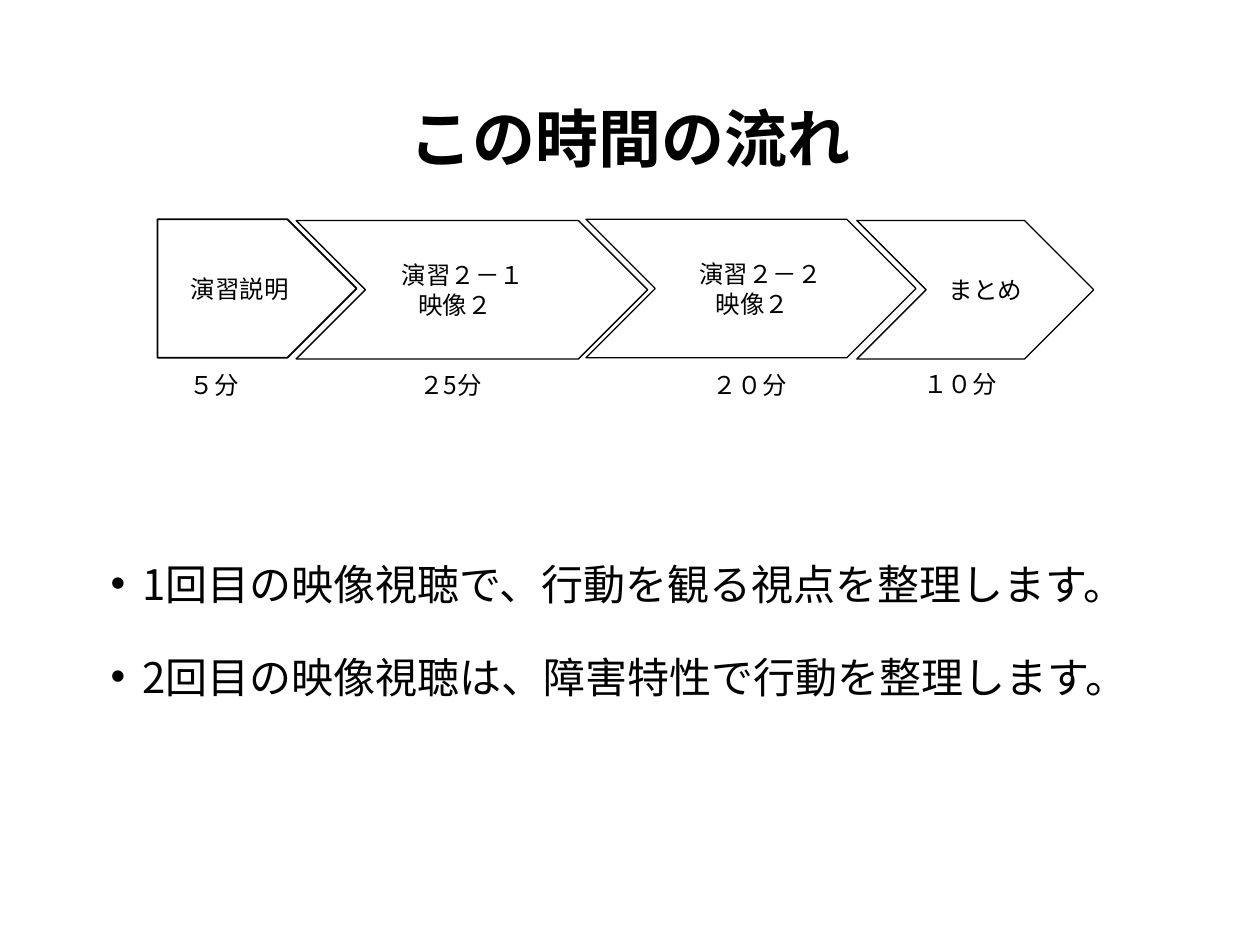
from pptx import Presentation
from pptx.dml.color import RGBColor as Rgb
from pptx.enum.shapes import MSO_SHAPE as Kind
from pptx.enum.text import MSO_ANCHOR as Anchor, MSO_AUTO_SIZE as Fit, PP_ALIGN as Align
from pptx.oxml.ns import qn
from pptx.util import Inches, Pt
from lxml.etree import SubElement

COLS, ROWS = 10, 7.5
INKS = {"text": "000000", "line": "000000", "back": "FFFFFF"}
FONT = "Noto Sans CJK JP"


def apply(item, vals):
    for key, val in vals.items():
        setattr(item, key, val)


class Page:
    """Holds the style and the slide; lengths are columns and rows of the grid."""

    def __init__(self, deck):
        self.unit_x = deck.slide_width / COLS
        self.unit_y = deck.slide_height / ROWS
        self.slide = deck.slides.add_slide(deck.slide_layouts[5])
        fill = self.slide.background.fill
        fill.solid()
        fill.fore_color.rgb = Rgb.from_string(INKS["back"])

    def box(self, x, y, wide, high):
        return [round(n) for n in (x * self.unit_x, y * self.unit_y,
                                   wide * self.unit_x, high * self.unit_y)]

    def words(self, shape, lines, size=14, bold=False, frame=None, para=None):
        text = shape.text_frame
        apply(text, {"word_wrap": True, **(frame or {})})
        text.text = "\n".join(lines)
        for par in text.paragraphs:
            apply(par, para or {})
            for run in par.runs:
                apply(run.font, {"name": FONT, "size": Pt(size), "bold": bold})
                run.font.color.rgb = Rgb.from_string(INKS["text"])
                SubElement(run.font._element, qn("a:ea"), typeface=FONT)
        return text.paragraphs

    def indent(self, par, left, first=0):
        props = par._p.get_or_add_pPr()
        props.set("marL", str(Inches(left)))
        props.set("indent", str(Inches(first)))
        return props

    def title(self, place, line):
        head = self.slide.shapes.title
        apply(head, dict(zip(("left", "top", "width", "height"), self.box(*place))))
        self.words(head, [line], 36, True, {"vertical_anchor": Anchor.MIDDLE},
                   {"alignment": Align.CENTER, "line_spacing": 0.9})

    def label(self, place, lines, **look):
        return self.words(self.slide.shapes.add_textbox(*self.box(*place)), lines, **look)

    def bullets(self, place, lines):
        pars = self.label(place, lines, size=24,
                          para={"line_spacing": 1.5, "space_before": Pt(10)})
        for par in pars:
            props = self.indent(par, 0.25, -0.25)
            SubElement(props, qn("a:buFont"), typeface="Arial")
            SubElement(props, qn("a:buChar"), char="•")

    def step(self, kind, place, lines, weight, left, right):
        """Draws one stage; two lines are set left, the second further in."""
        shape = self.slide.shapes.add_shape(kind, *self.box(*place))
        shape.shadow.inherit = False
        shape.fill.background()
        shape.line.width = Pt(weight)
        shape.line.color.rgb = Rgb.from_string(INKS["line"])
        pair = len(lines) > 1
        pars = self.words(shape, lines,
                          frame={"vertical_anchor": Anchor.MIDDLE,
                                 "margin_left": Inches(left), "margin_right": Inches(right)},
                          para={"alignment": Align.LEFT if pair else Align.CENTER})
        if pair:
            for par, inset in zip(pars, (0.19, 0.32)):
                self.indent(par, inset)


def main():
    deck = Presentation()
    apply(deck, {"slide_width": Inches(COLS), "slide_height": Inches(ROWS)})
    page = Page(deck)
    page.title((0.69, 0.4, 8.62, 1.45), "この時間の流れ")
    page.bullets((0.78, 4.18, 8.62, 2.57), [
        "1回目の映像視聴で、行動を観る視点を整理します。",
        "2回目の映像視聴は、障害特性で行動を整理します。"])

    steps = [  # kind, left, top, width, lines, line weight, side margins
        (Kind.PENTAGON, 1.25, 1.74, 1.58, ["演習説明"], 1, 0.1, 0.1),
        (Kind.CHEVRON, 2.35, 1.75, 2.79, ["演習２－１", "映像２"], 0.75, 0.1, 0.1),
        (Kind.CHEVRON, 4.65, 1.74, 2.62, ["演習２－２", "映像２"], 0.75, 0.16, 0.08),
        (Kind.CHEVRON, 6.8, 1.75, 1.88, ["まとめ"], 0.75, 0.16, 0)]
    for kind, x, y, wide, lines, weight, left, right in steps:
        page.step(kind, (x, y, wide, 1.1), lines, weight, left, right)

    times = [(1.41, 2.89, 0.63, "５分", Align.LEFT), (3.14, 2.89, 0.87, "２5分", Align.CENTER),
             (5.56, 2.89, 0.81, "２０分", Align.LEFT), (7.23, 2.88, 0.87, "１０分", Align.LEFT)]
    for x, y, wide, line, side in times:
        page.label((x, y, wide, 0.34), [line], para={"alignment": side},
                   frame={"auto_size": Fit.SHAPE_TO_FIT_TEXT})
    deck.save("out.pptx")


if __name__ == "__main__":
    main()
